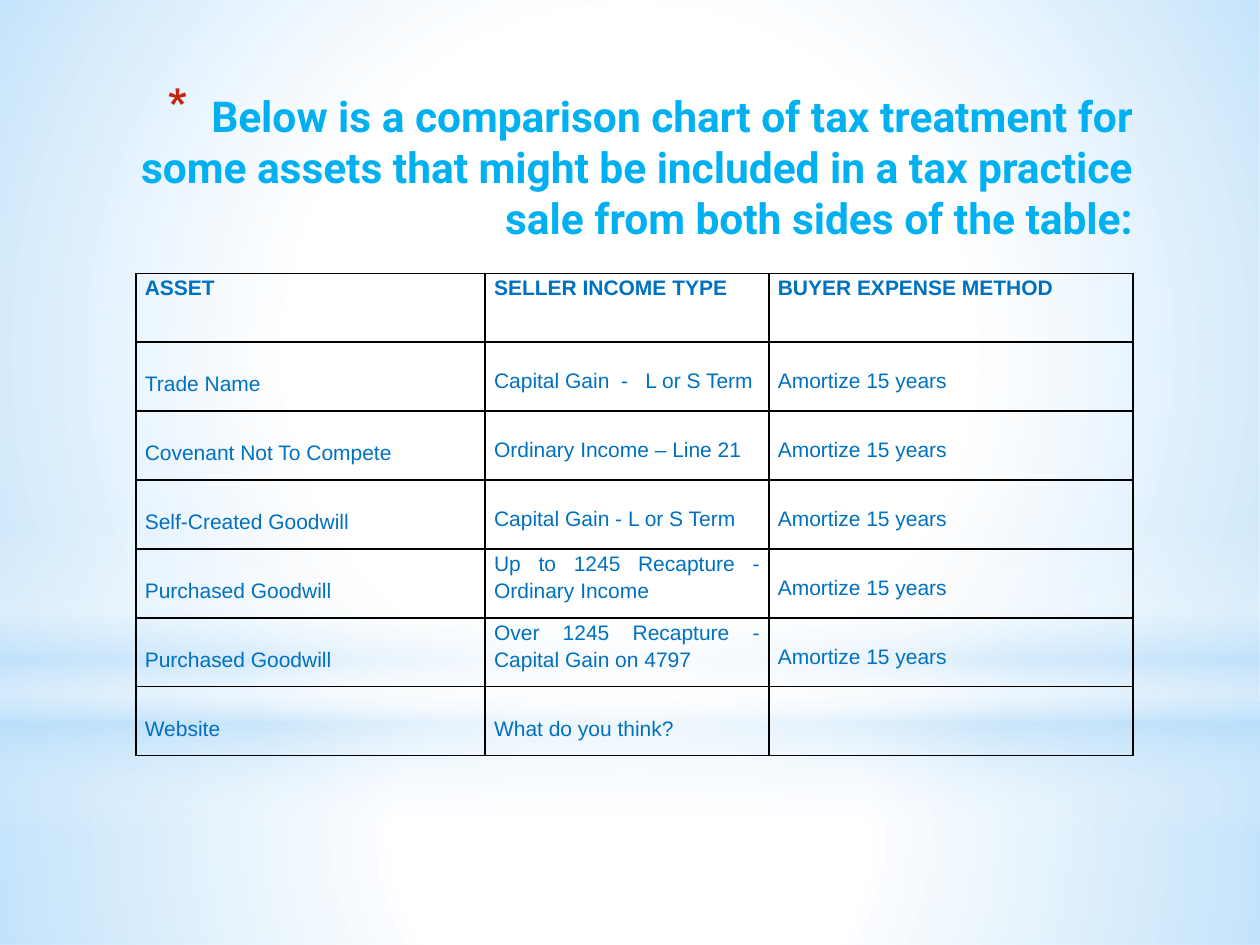
"""Build a slide that compares how assets in a practice sale are taxed."""
from dataclasses import dataclass

from pptx import Presentation
from pptx.dml.color import RGBColor
from pptx.enum.shapes import MSO_SHAPE
from pptx.enum.text import MSO_ANCHOR, PP_ALIGN
from pptx.oxml import parse_xml
from pptx.oxml.ns import nsdecls
from pptx.util import Cm, Pt

WHITE = RGBColor(0xFF, 0xFF, 0xFF)
PALE = RGBColor(0xB4, 0xDC, 0xFA)
SKY = RGBColor(0x00, 0xB0, 0xF0)
BLUE = RGBColor(0x00, 0x70, 0xC0)
RED = RGBColor(0xC3, 0x26, 0x0C)
BLACK = RGBColor(0x00, 0x00, 0x00)

WIDE, HIGH = 25.4, 19.05
ROUND = ('<a:path path="circle"><a:fillToRect l="50000" t="50000" '
         'r="50000" b="50000"/></a:path>')
DOWN = '<a:lin ang="5400000" scaled="0"/>'


@dataclass(frozen=True)
class Stop:
    at: int
    color: RGBColor
    alpha: int = 100


@dataclass(frozen=True)
class Glow:
    top: float
    height: float
    stops: tuple[Stop, ...]
    course: str = ROUND
    kind: MSO_SHAPE = MSO_SHAPE.RECTANGLE


@dataclass(frozen=True)
class Entry:
    text: str
    drop: float = 0
    bold: bool = False


GLOWS = (
    Glow(14.17, 4.88, (Stop(0, WHITE, 91), Stop(37, WHITE, 76), Stop(100, PALE, 79))),
    Glow(0, 14.17, (Stop(0, WHITE, 89), Stop(48, WHITE, 62), Stop(100, PALE, 79))),
    Glow(10.46, 6.35, (Stop(0, WHITE, 0), Stop(29, WHITE, 30), Stop(45, PALE, 40),
                       Stop(55, WHITE, 26), Stop(65, PALE, 60), Stop(100, WHITE, 0)), DOWN),
    Glow(4.45, 14.17, (Stop(0, WHITE), Stop(56, WHITE, 0)), kind=MSO_SHAPE.OVAL),
)

LOW, MID = 0.54, 0.48
TITLE = ("Below is a comparison chart of tax treatment for some assets that "
         "might be included in a tax practice sale from both sides of the table:")
HEADS = ("ASSET", "SELLER INCOME TYPE", "BUYER EXPENSE METHOD")
SPAN = Entry("Amortize 15 years", MID)
ROWS = (
    tuple(Entry(head, bold=True) for head in HEADS),
    (Entry("Trade Name", LOW), Entry("Capital Gain  -   L or S Term", MID), SPAN),
    (Entry("Covenant Not To Compete", LOW), Entry("Ordinary Income – Line 21", MID), SPAN),
    (Entry("Self-Created Goodwill", LOW), Entry("Capital Gain - L or S Term", MID), SPAN),
    (Entry("Purchased Goodwill", LOW), Entry("Up to 1245 Recapture - Ordinary Income"), SPAN),
    (Entry("Purchased Goodwill", LOW), Entry("Over 1245 Recapture - Capital Gain on 4797"), SPAN),
    (Entry("Website", LOW), Entry("What do you think?", LOW), Entry("")),
)
COLS = (7.04, 5.72, 7.34)
ROW = 1.39


def write(frame, text: str, *, font: str, size: float, color: RGBColor,
          align: PP_ALIGN, bold: bool = False, space: float = 1.0):
    frame.word_wrap = True
    para = frame.paragraphs[0]
    para.alignment = align
    para.line_spacing = space
    para.font.size = Pt(size)
    if text:
        run = para.add_run()
        run.text = text
        run.font.name = font
        run.font.size = Pt(size)
        run.font.bold = bold
        run.font.color.rgb = color
    return para


def draw_glow(slide, glow: Glow) -> None:
    shape = slide.shapes.add_shape(glow.kind, 0, Cm(glow.top), Cm(WIDE), Cm(glow.height))
    stops = "".join(
        f'<a:gs pos="{stop.at * 1000}"><a:srgbClr val="{stop.color}">'
        f'<a:alpha val="{stop.alpha * 1000}"/></a:srgbClr></a:gs>'
        for stop in glow.stops)
    shape._element.spPr.insert(2, parse_xml(
        f'<a:gradFill {nsdecls("a")} rotWithShape="1"><a:gsLst>{stops}</a:gsLst>'
        f'{glow.course}</a:gradFill>'))
    shape.line.fill.background()
    shape.shadow.inherit = False


def draw_title(slide) -> None:
    box = slide.shapes.add_textbox(Cm(1.7), Cm(1.7), Cm(21.39), Cm(3.38))
    box.text_frame.vertical_anchor = MSO_ANCHOR.TOP
    para = write(box.text_frame, TITLE, font="Roboto", size=24.3, color=SKY,
                 align=PP_ALIGN.RIGHT, bold=True)
    props = para._p.get_or_add_pPr()
    props.set("marL", str(Cm(0.89)))
    props.set("indent", str(-Cm(0.89)))
    marks = (f'<a:buClr {nsdecls("a")}><a:srgbClr val="{RED}"/></a:buClr>',
             f'<a:buSzPct {nsdecls("a")} val="128000"/>',
             f'<a:buChar {nsdecls("a")} char="*"/>')
    for place, mark in enumerate(marks, 1):
        props.insert(place, parse_xml(mark))


def fill_cell(cell, entry: Entry) -> None:
    cell.margin_left = cell.margin_right = Cm(0.18)
    cell.margin_top, cell.margin_bottom = Cm(entry.drop), 0
    write(cell.text_frame, entry.text, font="Arial", size=12, color=BLUE,
          align=PP_ALIGN.JUSTIFY, bold=entry.bold, space=1.15)
    props = cell._tc.get_or_add_tcPr()
    for side in "LRTB":
        props.append(parse_xml(
            f'<a:ln{side} {nsdecls("a")} w="{Pt(1)}"><a:solidFill>'
            f'<a:srgbClr val="{BLACK}"/></a:solidFill></a:ln{side}>'))
    cell.fill.background()


def draw_table(slide) -> None:
    table = slide.shapes.add_table(len(ROWS), len(COLS), Cm(2.74), Cm(5.51),
                                   Cm(sum(COLS)), Cm(ROW * len(ROWS))).table
    table.first_row = table.horz_banding = False
    for col, width in zip(table.columns, COLS):
        col.width = Cm(width)
    for row, items in zip(table.rows, ROWS):
        row.height = Cm(ROW)
        for cell, entry in zip(row.cells, items):
            fill_cell(cell, entry)


def main() -> None:
    deck = Presentation()
    deck.slide_width, deck.slide_height = Cm(WIDE), Cm(HIGH)
    slide = deck.slides.add_slide(deck.slide_layouts[6])
    slide.background.fill.solid()
    slide.background.fill.fore_color.rgb = WHITE
    for glow in GLOWS:
        draw_glow(slide, glow)
    draw_table(slide)
    draw_title(slide)
    deck.save("out.pptx")


if __name__ == "__main__":
    main()
